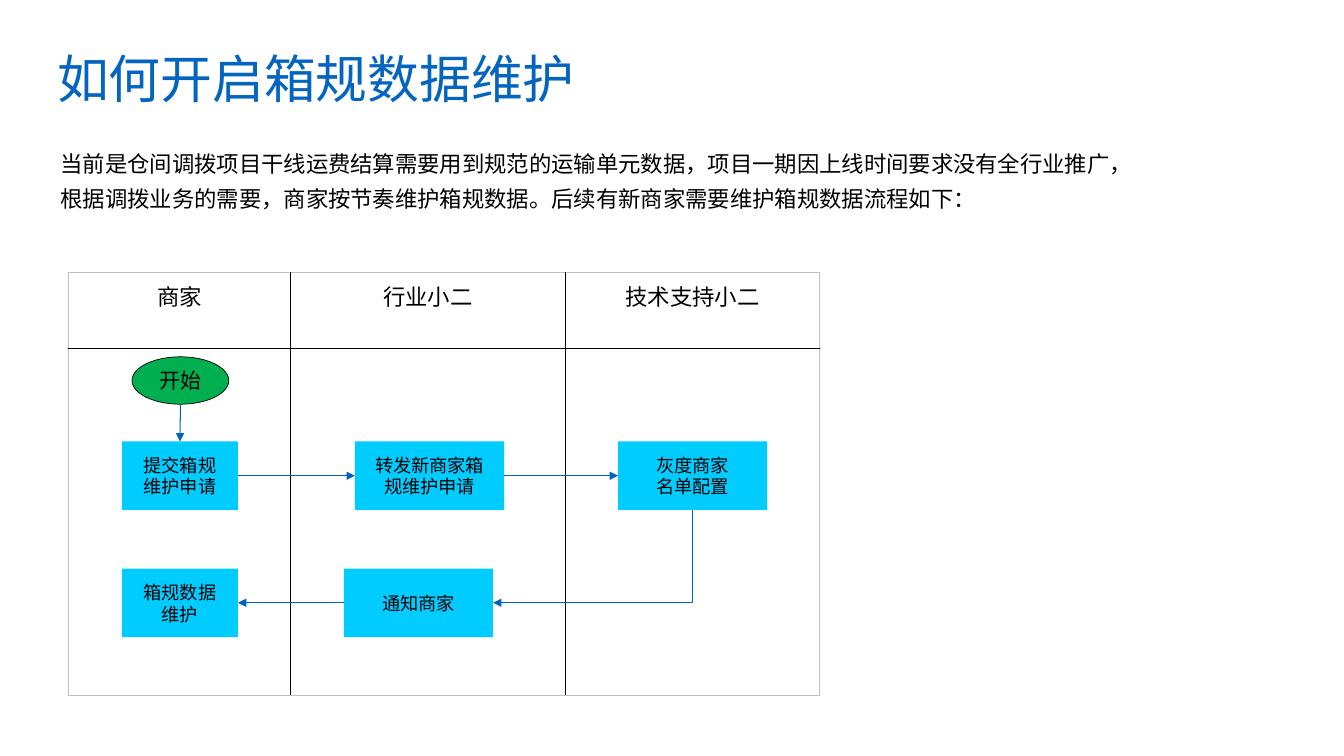
from dataclasses import dataclass

import pptx
import pptx.dml.color
import pptx.enum.shapes
import pptx.enum.text
import pptx.oxml
import pptx.oxml.ns
import pptx.util
from pptx.dml.color import RGBColor
from pptx.util import Inches

BLACK = RGBColor(0x00, 0x00, 0x00)
BORDER_GRAY = RGBColor(0xBF, 0xBF, 0xBF)
TITLE_BLUE = RGBColor(0x03, 0x65, 0xC0)
ARROW_BLUE = RGBColor(0x00, 0x63, 0xBF)
STEP_CYAN = RGBColor(0x00, 0xCC, 0xFF)
START_GREEN = RGBColor(0x00, 0xB0, 0x50)
LATIN_FONT = "Arial"
CHINESE_FONT = "Noto Sans CJK SC"
TOP, LEFT, BOTTOM, RIGHT = range(4)
CENTER = pptx.enum.text.PP_ALIGN.CENTER
RECTANGLE = pptx.enum.shapes.MSO_SHAPE.RECTANGLE
OVAL = pptx.enum.shapes.MSO_SHAPE.OVAL
STRAIGHT = pptx.enum.shapes.MSO_CONNECTOR.STRAIGHT

LANES = ("商家", "行业小二", "技术支持小二")
LANE_WIDTHS = (2.2, 2.73, 2.52)
ROW_HEIGHTS = (0.76, 3.44)
UPPER_ROW, LOWER_ROW = 4.38, 5.64
STEP_HEIGHT = 0.68
NARROW, WIDE = 1.15, 1.48


@dataclass(frozen=True)
class Node:
    text: str
    left: float
    top: float
    width: float
    height: float = STEP_HEIGHT
    kind: int = RECTANGLE
    fill: RGBColor = STEP_CYAN
    size: float = 13


@dataclass(frozen=True)
class Arrow:
    source: str
    source_side: int
    target: str
    target_side: int


START = Node("开始", 1.31, 3.54, 0.96, 0.47, OVAL, START_GREEN, 15)
STEPS = {
    "submit": Node("提交箱规维护申请", 1.21, UPPER_ROW, NARROW),
    "forward": Node("转发新商家箱规维护申请", 3.52, UPPER_ROW, WIDE),
    "configure": Node("灰度商家\n名单配置", 6.13, UPPER_ROW, WIDE),
    "maintain": Node("箱规数据维护", 1.21, LOWER_ROW, NARROW),
    "notify": Node("通知商家", 3.41, LOWER_ROW, WIDE),
}
ARROWS = (
    Arrow("submit", RIGHT, "forward", LEFT),
    Arrow("forward", RIGHT, "configure", LEFT),
    Arrow("notify", LEFT, "maintain", RIGHT),
)


def format_text(frame, size: float, color: RGBColor, font_name: str) -> None:
    for paragraph in frame.paragraphs:
        for run in paragraph.runs:
            run.font.size = pptx.util.Pt(size)
            run.font.color.rgb = color
            run.font.name = font_name
            east_asian = pptx.oxml.parse_xml(
                f'<a:ea {pptx.oxml.ns.nsdecls("a")} typeface="{CHINESE_FONT}"/>')
            run.font._element.append(east_asian)


def set_margins(box) -> None:
    box.margin_left = box.margin_right = Inches(0.13)
    box.margin_top = box.margin_bottom = Inches(0.07)


def add_text(slide, text: str, left: float, top: float, width: float, height: float,
             size: float, color: RGBColor, wrap: bool):
    frame = slide.shapes.add_textbox(
        Inches(left), Inches(top), Inches(width), Inches(height)).text_frame
    set_margins(frame)
    frame.word_wrap = wrap
    frame.text = text
    format_text(frame, size, color, LATIN_FONT)
    return frame.paragraphs[0]


def set_border(cell, side: str, color: RGBColor, width: float) -> None:
    cell._tc.get_or_add_tcPr().append(pptx.oxml.parse_xml(
        f'<a:ln{side} {pptx.oxml.ns.nsdecls("a")} w="{int(pptx.util.Pt(width))}">'
        f'<a:solidFill><a:srgbClr val="{color}"/></a:solidFill></a:ln{side}>'))


def add_lanes(slide) -> None:
    table = slide.shapes.add_table(
        len(ROW_HEIGHTS), len(LANES), Inches(0.68), Inches(2.7),
        Inches(sum(LANE_WIDTHS)), Inches(sum(ROW_HEIGHTS))).table
    table.first_row = table.horz_banding = False
    for row, height in zip(table.rows, ROW_HEIGHTS):
        row.height = Inches(height)
    for column, width in zip(table.columns, LANE_WIDTHS):
        column.width = Inches(width)
    last_row, last_column = len(ROW_HEIGHTS) - 1, len(LANES) - 1
    for row_index in range(len(ROW_HEIGHTS)):
        for column_index, lane in enumerate(LANES):
            cell = table.cell(row_index, column_index)
            set_margins(cell)
            outer_sides = {"L": column_index == 0, "R": column_index == last_column,
                           "T": row_index == 0, "B": row_index == last_row}
            for side, outer in outer_sides.items():
                set_border(cell, side, BORDER_GRAY if outer else BLACK, 0.5 if outer else 1)
            cell.fill.background()
            if row_index == 0:
                cell.text = lane
                cell.text_frame.paragraphs[0].alignment = CENTER
                format_text(cell.text_frame, 16, BLACK, LATIN_FONT)


def add_node(slide, node: Node):
    shape = slide.shapes.add_shape(
        node.kind, Inches(node.left), Inches(node.top), Inches(node.width), Inches(node.height))
    shape.shadow.inherit = False
    shape.fill.solid()
    shape.fill.fore_color.rgb = node.fill
    if node.kind == OVAL:
        shape.line.color.rgb = BLACK
        shape.line.width = pptx.util.Pt(0.5)
    else:
        shape.line.fill.background()
    frame = shape.text_frame
    set_margins(frame)
    frame.word_wrap = True
    frame.vertical_anchor = pptx.enum.text.MSO_ANCHOR.MIDDLE
    frame.text = node.text
    for paragraph in frame.paragraphs:
        paragraph.alignment = CENTER
    format_text(frame, node.size, BLACK, CHINESE_FONT)
    return shape


def add_arrow(slide, begin_x: float = 0, begin_y: float = 0):
    connector = slide.shapes.add_connector(
        STRAIGHT, Inches(begin_x), Inches(begin_y), Inches(begin_x), Inches(begin_y))
    connector.line.color.rgb = ARROW_BLUE
    connector.line.width = pptx.util.Pt(0.75)
    namespace = pptx.oxml.ns.nsdecls("a")
    connector.line._get_or_add_ln().append(
        pptx.oxml.parse_xml(f'<a:tailEnd {namespace} type="triangle"/>'))
    connector._element.spPr.append(pptx.oxml.parse_xml(f"<a:effectLst {namespace}/>"))
    return connector


def add_corner_arrow(slide, source, target) -> None:
    connector = add_arrow(slide)
    connector.begin_connect(source, BOTTOM)
    connector.end_connect(target, RIGHT)
    across = connector.width
    down = connector.height
    middle_x = connector.left + across // 2
    middle_y = connector.top + down // 2
    properties = connector._element.spPr
    properties.find(pptx.oxml.ns.qn("a:prstGeom")).set("prst", "bentConnector2")
    transform = properties.find(pptx.oxml.ns.qn("a:xfrm"))
    for flip in ("flipH", "flipV"):
        transform.attrib.pop(flip, None)
    transform.set("rot", "5400000")
    connector.left, connector.top = middle_x - down // 2, middle_y - across // 2
    connector.width, connector.height = down, across


def main() -> None:
    presentation = pptx.Presentation()
    presentation.slide_width = Inches(13.33)
    presentation.slide_height = Inches(7.5)
    slide = presentation.slides.add_slide(presentation.slide_layouts[6])

    introduction = add_text(
        slide,
        "当前是仓间调拨项目干线运费结算需要用到规范的运输单元数据，项目一期因上线时间要求没有全行业推广，"
        "根据调拨业务的需要，商家按节奏维护箱规数据。后续有新商家需要维护箱规数据流程如下：",
        0.47, 1.34, 10.92, 0.83, 16, BLACK, True)
    introduction.line_spacing = 1.3
    title = add_text(slide, "如何开启箱规数据维护", 0.38, 0.39, 5.51, 0.76, 37, TITLE_BLUE, False)
    title.alignment = CENTER

    add_lanes(slide)
    add_node(slide, START)
    shapes = {name: add_node(slide, node) for name, node in STEPS.items()}
    start_arrow = add_arrow(slide, START.left + START.width / 2, START.top + START.height)
    start_arrow.end_connect(shapes["submit"], TOP)
    for arrow in ARROWS:
        connector = add_arrow(slide)
        connector.begin_connect(shapes[arrow.source], arrow.source_side)
        connector.end_connect(shapes[arrow.target], arrow.target_side)
    add_corner_arrow(slide, shapes["configure"], shapes["notify"])
    presentation.save("out.pptx")


if __name__ == "__main__":
    main()
